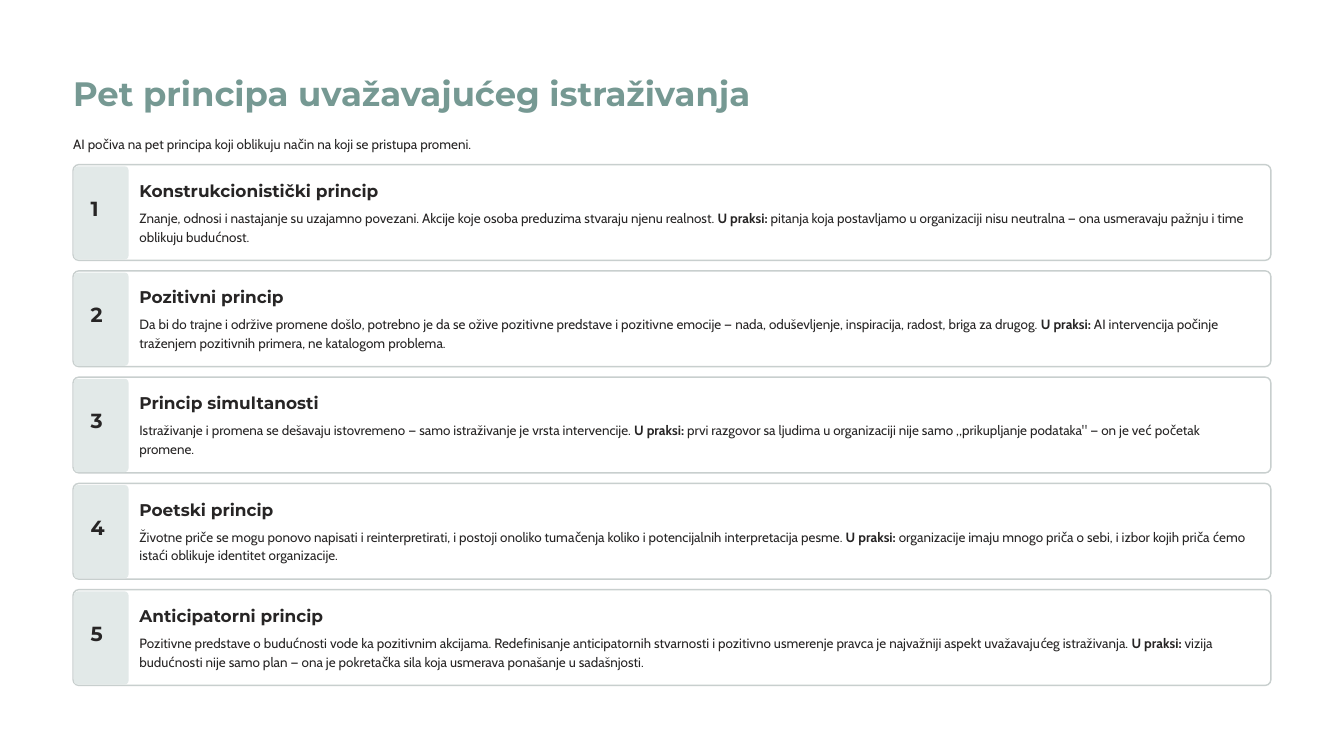
import pptx
import pptx.util
import pptx.dml.color
import pptx.enum.shapes
import pptx.enum.text

Inches, Pt = pptx.util.Inches, pptx.util.Pt

TITLE = "Pet principa uvažavajućeg istraživanja"
INTRO = "AI počiva na pet principa koji oblikuju način na koji se pristupa promeni."
IN_PRACTICE = "U praksi:"
# name, meaning, what it means in practice
PRINCIPLES = [
    ("Konstrukcionistički princip",
     "Znanje, odnosi i nastajanje su uzajamno povezani. Akcije koje osoba preduzima "
     "stvaraju njenu realnost.",
     "pitanja koja postavljamo u organizaciji nisu neutralna — ona usmeravaju pažnju "
     "i time oblikuju budućnost."),
    ("Pozitivni princip",
     "Da bi do trajne i održive promene došlo, potrebno je da se ožive pozitivne predstave "
     "i pozitivne emocije — nada, oduševljenje, inspiracija, radost, briga za drugog.",
     "AI intervencija počinje traženjem pozitivnih primera, ne katalogom problema."),
    ("Princip simultanosti",
     "Istraživanje i promena se dešavaju istovremeno — samo istraživanje je vrsta intervencije.",
     "prvi razgovor sa ljudima u organizaciji nije samo „prikupljanje podataka\" — on je već "
     "početak promene."),
    ("Poetski princip",
     "Životne priče se mogu ponovo napisati i reinterpretirati, i postoji onoliko tumačenja "
     "koliko i potencijalnih interpretacija pesme.",
     "organizacije imaju mnogo priča o sebi, i izbor kojih priča ćemo istaći oblikuje "
     "identitet organizacije."),
    ("Anticipatorni princip",
     "Pozitivne predstave o budućnosti vode ka pozitivnim akcijama. Redefinisanje anticipatornih "
     "stvarnosti i pozitivno usmerenje pravca je najvažniji aspekt uvažavajućeg istraživanja.",
     "vizija budućnosti nije samo plan — ona je pokretačka sila koja usmerava ponašanje "
     "u sadašnjosti."),
]

GREEN, INK, WHITE, BORDER, BAND = "769993", "272525", "FFFFFF", "C8CFCE", "E2E9E8"
HEADING_FONT, BODY_FONT = "Montserrat", "Cabin"
LEFT, WIDTH = 0.87, 14.26
FIRST_TOP, LAST_TOP, CARD_HEIGHT = 1.96, 7.02, 1.14
TEXT_LEFT, TEXT_WIDTH = 1.66, 13.29


def color(hex_string):
    return pptx.dml.color.RGBColor.from_string(hex_string)


def write(text, left, top, width, height, size=11.5, font=BODY_FONT, ink=INK,
          bold=False, leading=16, holder=None):
    """Write text, a string or a list of (string, bold) runs, into holder or a new box."""
    box = holder or slide.shapes.add_textbox(0, 0, 0, 0)
    box.left, box.top = Inches(left), Inches(top)
    box.width, box.height = Inches(width), Inches(height)
    frame = box.text_frame
    frame.margin_left = frame.margin_right = frame.margin_top = frame.margin_bottom = 0
    frame.word_wrap = True
    frame.auto_size = pptx.enum.text.MSO_AUTO_SIZE.NONE
    frame.vertical_anchor = pptx.enum.text.MSO_ANCHOR.TOP
    paragraph = frame.paragraphs[0]
    paragraph.alignment = pptx.enum.text.PP_ALIGN.LEFT
    paragraph.line_spacing = Pt(leading)
    for words, strong in [(text, bold)] if isinstance(text, str) else text:
        run = paragraph.add_run()
        run.text = words
        run.font.name, run.font.size, run.font.bold = font, Pt(size), strong
        run.font.color.rgb = color(ink)


def add_panel(left, top, width, height, fill, rounding, border=None):
    panel = slide.shapes.add_shape(pptx.enum.shapes.MSO_SHAPE.ROUNDED_RECTANGLE,
                                   Inches(left), Inches(top), Inches(width), Inches(height))
    panel.adjustments[0] = rounding
    panel.shadow.inherit = False
    panel.fill.solid()
    panel.fill.fore_color.rgb = color(fill)
    if border:
        panel.line.color.rgb = color(border)
        panel.line.width = Pt(1.2)
    else:
        panel.line.fill.background()


presentation = pptx.Presentation()
presentation.slide_width, presentation.slide_height = Inches(16), Inches(9)
slide = presentation.slides.add_slide(presentation.slide_layouts[5])
slide.background.fill.solid()
slide.background.fill.fore_color.rgb = color(WHITE)

write(TITLE, LEFT, 0.84, WIDTH, 0.51, size=29, font=HEADING_FONT, ink=GREEN,
      bold=True, leading=36.5, holder=slide.shapes.title)
write(INTRO, LEFT, 1.59, WIDTH, 0.23)

pitch = (LAST_TOP - FIRST_TOP) / (len(PRINCIPLES) - 1)
for index, (name, meaning, practice) in enumerate(PRINCIPLES):
    top = FIRST_TOP + index * pitch
    add_panel(LEFT, top, WIDTH, CARD_HEIGHT, WHITE, 0.06, border=BORDER)
    add_panel(LEFT + 0.01, top + 0.02, 0.65, 1.11, BAND, 0.07)
    write(str(index + 1), 1.08, top + 0.42, 0.24, 0.31, size=17.5, font=HEADING_FONT,
          bold=True, leading=17.5)
    write(name, TEXT_LEFT, top + 0.18, TEXT_WIDTH, 0.25, size=14.5, font=HEADING_FONT,
          bold=True, leading=18)
    write([(meaning + " ", False), (IN_PRACTICE, True), (" " + practice, False)],
          TEXT_LEFT, top + 0.51, TEXT_WIDTH, 0.46)

presentation.save("out.pptx")
